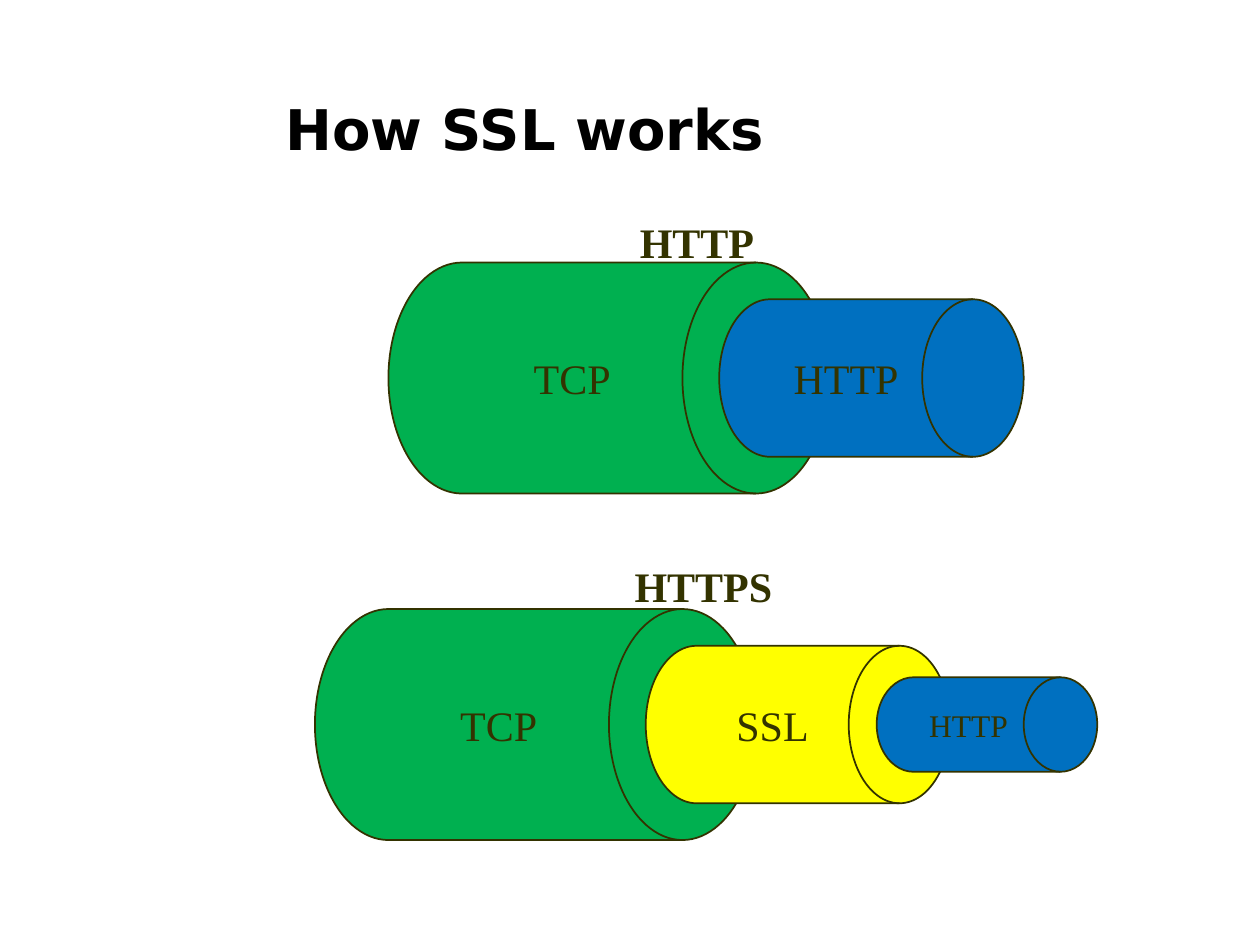
import pptx
import pptx.util
import pptx.dml.color
import pptx.enum.shapes
import pptx.enum.text

Pt = pptx.util.Pt
RGBColor = pptx.dml.color.RGBColor
PP_ALIGN = pptx.enum.text.PP_ALIGN
MSO_ANCHOR = pptx.enum.text.MSO_ANCHOR

BLACK = RGBColor(0x00, 0x00, 0x00)
OLIVE = RGBColor(0x33, 0x33, 0x00)
GREEN = RGBColor(0x00, 0xB0, 0x50)
YELLOW = RGBColor(0xFF, 0xFF, 0x00)
BLUE = RGBColor(0x00, 0x70, 0xC0)
SERIF = "Times New Roman"


def set_text(sp, text, size, font, color, bold, align, anchor):
    tf = sp.text_frame
    tf.word_wrap = True
    tf.vertical_anchor = anchor
    p = tf.paragraphs[0]
    p.text = text
    p.alignment = align
    p.font.size = Pt(size)
    p.font.name = font
    p.font.bold = bold
    p.font.color.rgb = color


prs = pptx.Presentation()
prs.slide_width = Pt(720)
prs.slide_height = Pt(540)
s = prs.slides.add_slide(prs.slide_layouts[6])

title = s.shapes.add_textbox(Pt(156), Pt(18), Pt(516), Pt(78))
set_text(title, "How SSL works", 32, "DejaVu Sans", BLACK, True,
         PP_ALIGN.LEFT, MSO_ANCHOR.BOTTOM)

https_axis = 414
http_axis = 216
drums = [
    ("TCP", 180, https_axis, 252, 132, GREEN, 24),
    ("SSL", 369, https_axis, 174, 90, YELLOW, 24),
    ("HTTP", 501, https_axis, 126, 54, BLUE, 18),
    ("TCP", 222, http_axis, 252, 132, GREEN, 24),
    ("HTTP", 411, http_axis, 174, 90, BLUE, 24),
]
for text, left, axis, width, height, fill, size in drums:
    sp = s.shapes.add_shape(
        pptx.enum.shapes.MSO_SHAPE.FLOWCHART_DIRECT_ACCESS_STORAGE,
        Pt(left), Pt(axis - height / 2), Pt(width), Pt(height))
    sp.shadow.inherit = False
    sp.fill.solid()
    sp.fill.fore_color.rgb = fill
    sp.line.color.rgb = OLIVE
    sp.line.width = Pt(1)
    set_text(sp, text, size, SERIF, OLIVE, False,
             PP_ALIGN.CENTER, MSO_ANCHOR.MIDDLE)

labels = [("HTTP", 358.5, 120, 90), ("HTTPS", 355.5, 316.8, 96)]
for text, left, top, width in labels:
    sp = s.shapes.add_textbox(Pt(left), Pt(top), Pt(width), Pt(36))
    set_text(sp, text, 24, SERIF, OLIVE, True, PP_ALIGN.LEFT, MSO_ANCHOR.TOP)

prs.save("out.pptx")
